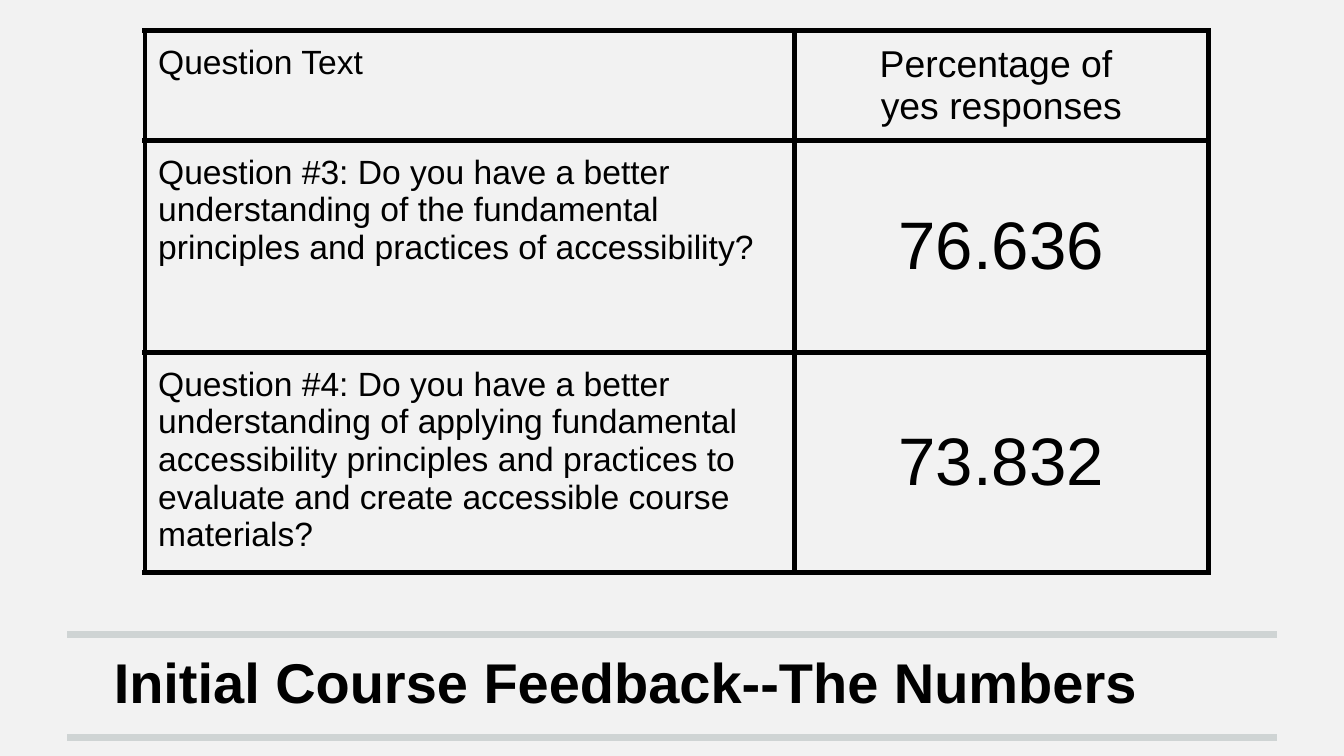
"""Build the course feedback slide with its table of yes responses."""
from lxml.etree import SubElement
from pptx import Presentation
from pptx.dml.color import RGBColor
from pptx.enum.shapes import MSO_CONNECTOR
from pptx.enum.text import MSO_ANCHOR, PP_ALIGN
from pptx.oxml.ns import qn
from pptx.util import Cm, Pt

BLACK = RGBColor(0x00, 0x00, 0x00)
RULE_GREY = RGBColor(0xCF, 0xD4, 0xD4)
BACKGROUND = RGBColor(0xF2, 0xF2, 0xF2)
FONT = "Arial"
INSET = Cm(0.25)

ROWS = [
    ("Question Text", "Percentage of \nyes responses", 20, 1.83),
    ("Question #3: Do you have a better understanding of the fundamental "
     "principles and practices of accessibility?", "76.636", 36, 4.01),
    ("Question #4: Do you have a better understanding of applying fundamental "
     "accessibility principles and practices to evaluate and create accessible "
     "course materials?", "73.832", 36, 4.15),
]


def write_text(paragraph, text, size, alignment, bold=False):
    paragraph.text = text
    paragraph.alignment = alignment
    for run in paragraph.runs:
        run.font.name = FONT
        run.font.size = Pt(size)
        run.font.bold = bold
        run.font.color.rgb = BLACK


def add_borders(cell):
    properties = cell._tc.get_or_add_tcPr()
    for side in ("a:lnL", "a:lnR", "a:lnT", "a:lnB"):
        border = SubElement(properties, qn(side), w=str(Pt(3)))
        fill = SubElement(border, qn("a:solidFill"))
        SubElement(fill, qn("a:srgbClr"), val=str(BLACK))


presentation = Presentation()
presentation.slide_width = Cm(25.4)
presentation.slide_height = Cm(14.29)
slide = presentation.slides.add_slide(presentation.slide_layouts[5])
slide.background.fill.solid()
slide.background.fill.fore_color.rgb = BACKGROUND

for top in (13.94, 11.99):
    rule = slide.shapes.add_connector(
        MSO_CONNECTOR.STRAIGHT, Cm(1.27), Cm(top), Cm(24.13), Cm(top))
    rule.line.color.rgb = RULE_GREY
    rule.line.width = Pt(4)
    SubElement(rule._element.spPr, qn("a:effectLst"))

title = slide.shapes.title
title.left, title.top = Cm(1.9), Cm(11.38)
title.width, title.height = Cm(22.86), Cm(2.39)
title_frame = title.text_frame
title_frame.vertical_anchor = MSO_ANCHOR.BOTTOM
title_frame.margin_left = title_frame.margin_right = INSET
title_frame.margin_top = title_frame.margin_bottom = INSET
write_text(title_frame.paragraphs[0], "Initial Course Feedback--The Numbers",
           30, PP_ALIGN.LEFT, bold=True)

table = slide.shapes.add_table(
    len(ROWS), 2, Cm(2.74), Cm(0.58), Cm(20.1), Cm(9.99)).table
table.first_row = False
table.horz_banding = False
table.columns[0].width = Cm(12.27)
table.columns[1].width = Cm(7.83)

for row_index, (question, percentage, percentage_size, height) in enumerate(ROWS):
    table.rows[row_index].height = Cm(height)
    columns = [
        (question, 18, PP_ALIGN.LEFT, MSO_ANCHOR.TOP),
        (percentage, percentage_size, PP_ALIGN.CENTER, MSO_ANCHOR.MIDDLE),
    ]
    for column_index, (text, size, alignment, anchor) in enumerate(columns):
        cell = table.cell(row_index, column_index)
        cell.margin_left = cell.margin_right = INSET
        cell.margin_top = cell.margin_bottom = INSET
        cell.vertical_anchor = anchor
        add_borders(cell)
        cell.fill.background()
        write_text(cell.text_frame.paragraphs[0], text, size, alignment)

presentation.save("out.pptx")
